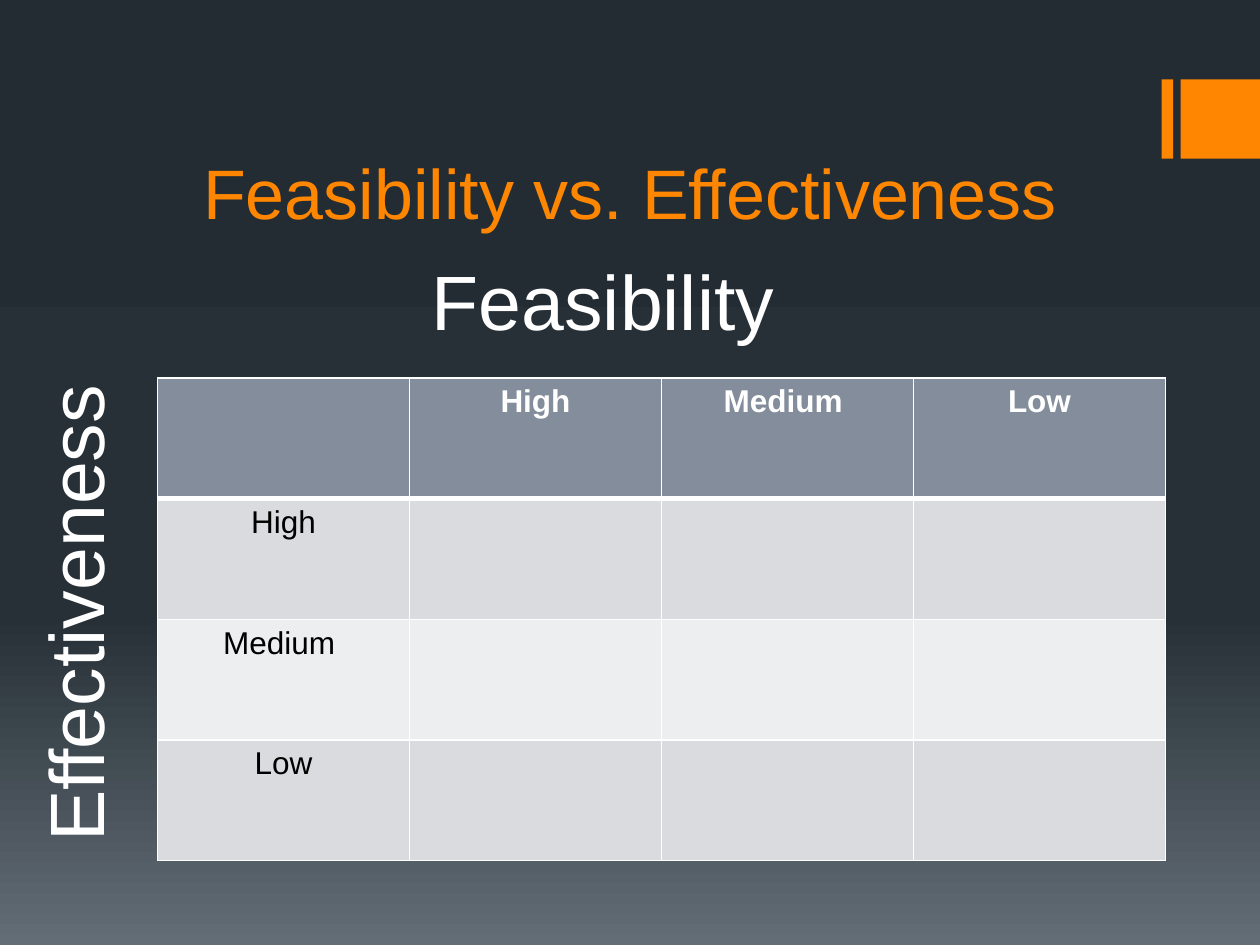
from lxml import etree
from pptx import Presentation
from pptx.dml.color import RGBColor
from pptx.enum.shapes import MSO_SHAPE
from pptx.enum.text import MSO_ANCHOR, PP_ALIGN
from pptx.oxml.ns import qn
from pptx.util import Inches, Pt

RECT = MSO_SHAPE.RECTANGLE
TOP, BOTTOM = MSO_ANCHOR.TOP, MSO_ANCHOR.BOTTOM
LEFT, CENTER = PP_ALIGN.LEFT, PP_ALIGN.CENTER

# Content
FONT = "Arial"
ORANGE, WHITE, BLACK = "FF8600", "FFFFFF", "000000"
HEAD, BANDS = "838D9B", ("D9DBDE", "EDEEEF")
STOPS = [(0, "242C33"), (65, "273037"), (100, "636D76")]
BARS = [(9.22, 0.09), (9.37, 0.63)]  # left, width
LABELS = [  # text, box, size, colour, align, anchor, turn, wrap
    ("Feasibility vs. Effectiveness", (1, 0.64, 8, 1.26), 40, ORANGE,
     CENTER, BOTTOM, 0, True),
    ("Feasibility", (3.33, 1.96, 3, 0.84), 44, WHITE, LEFT, TOP, 0, True),
    ("Effectiveness", (-1.34, 4.43, 3.86, 0.84), 44, WHITE,
     LEFT, TOP, 270, False),
]
ROWS = [
    ["", "High", "Medium ", "Low"],
    ["High", "", "", ""],
    ["Medium ", "", "", ""],
    ["Low", "", "", ""],
]
GRID = (1.25, 3, 8, 3.83)


def color(code):
    return RGBColor.from_string(code)


def style(para, size, code, align, bold=False):
    para.alignment = align
    for run in para.runs:
        font = run.font
        font.name, font.size, font.bold = FONT, Pt(size), bold
        font.color.rgb = color(code)


def add_back(slide):
    fill = slide.background.fill
    fill.gradient()
    fill.gradient_angle = 270
    stops = slide.element.find(".//" + qn("a:gsLst"))
    for old in list(stops):
        stops.remove(old)
    for spot, code in STOPS:
        stop = etree.SubElement(stops, qn("a:gs"), pos=str(spot * 1000))
        etree.SubElement(stop, qn("a:srgbClr"), val=code)


def add_bar(slide, left, width):
    bar = slide.shapes.add_shape(
        RECT, Inches(left), Inches(0.63), Inches(width), Inches(0.63))
    bar.shadow.inherit = False
    bar.fill.solid()
    bar.fill.fore_color.rgb = color(ORANGE)
    bar.line.fill.background()


def add_label(slide, text, box, size, code, align, anchor, turn, wrap):
    label = slide.shapes.add_textbox(*map(Inches, box))
    label.rotation = turn
    frame = label.text_frame
    frame.word_wrap = wrap
    frame.vertical_anchor = anchor
    frame.text = text
    style(frame.paragraphs[0], size, code, align)


def set_edges(cell, widths):
    props = cell._tc.get_or_add_tcPr()
    for spot, (side, width) in enumerate(widths.items()):
        line = etree.Element(qn("a:ln" + side), w=str(Pt(width)))
        fill = etree.SubElement(line, qn("a:solidFill"))
        etree.SubElement(fill, qn("a:srgbClr"), val=WHITE)
        props.insert(spot, line)


def add_grid(slide):
    count = len(ROWS)
    table = slide.shapes.add_table(
        count, len(ROWS[0]), *map(Inches, GRID)).table
    for r, row in enumerate(ROWS):
        top = r == 0
        for c, text in enumerate(row):
            cell = table.cell(r, c)
            cell.fill.solid()
            cell.fill.fore_color.rgb = color(HEAD if top else BANDS[(r - 1) % 2])
            set_edges(cell, {"L": 1, "R": 1, "T": 3 if r == 1 else 1,
                             "B": 3 if top else 1})
            if text:
                cell.text_frame.text = text
                style(cell.text_frame.paragraphs[0], 18,
                      WHITE if top else BLACK, CENTER, top)


def main():
    deck = Presentation()
    deck.slide_width, deck.slide_height = Inches(10), Inches(7.5)
    slide = deck.slides.add_slide(deck.slide_layouts[6])
    add_back(slide)
    for bar in BARS:
        add_bar(slide, *bar)
    add_grid(slide)
    for label in LABELS:
        add_label(slide, *label)
    deck.save("out.pptx")


if __name__ == "__main__":
    main()
